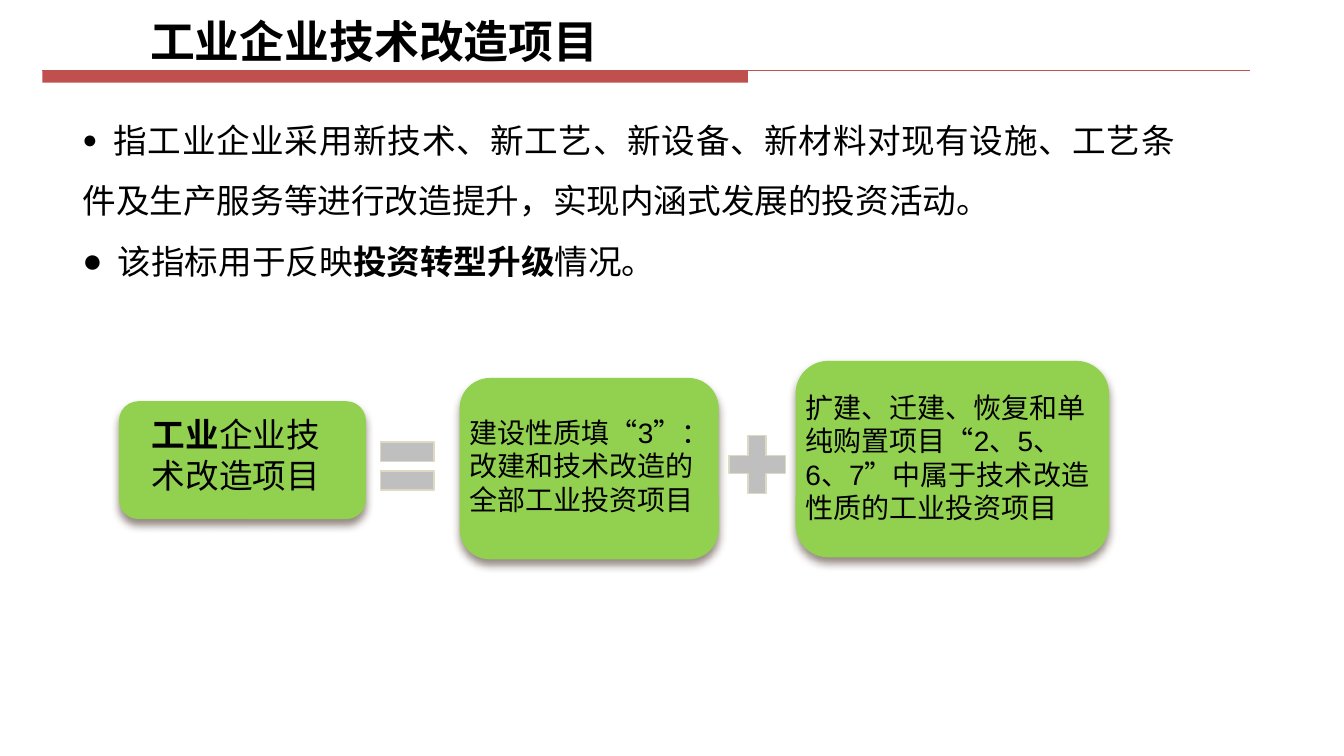
"""Build the slide on industrial technical renovation projects."""
from lxml.etree import SubElement
from pptx import Presentation
from pptx.dml.color import RGBColor
from pptx.enum.shapes import MSO_CONNECTOR, MSO_SHAPE
from pptx.enum.text import MSO_ANCHOR, PP_ALIGN
from pptx.oxml import parse_xml
from pptx.oxml.ns import nsdecls, qn
from pptx.util import Inches, Pt

theme = {
    "ink": RGBColor.from_string("000000"),
    "red": RGBColor.from_string("C0504D"),
    "green": RGBColor.from_string("92D050"),
    "gray": RGBColor.from_string("BFBFBF"),
    "edge": RGBColor.from_string("DDD9C3"),
    "shade": "4E3B30",
    "sans": "Noto Sans CJK SC",
    "latin": "Arial",
    "title": Pt(32),
    "body": Pt(24),
    "note": Pt(20),
}

deck = Presentation()
deck.slide_width, deck.slide_height = Inches(13.33), Inches(7.5)
col, row = deck.slide_width / 100, deck.slide_height / 100
slide = deck.slides.add_slide(deck.slide_layouts[6])
shapes = slide.shapes


def place(x, y, w, h):
    """Turn percent shares of the slide into lengths."""
    return int(x * col), int(y * row), int(w * col), int(h * row)


def write(spot, paras, size, face, form, anchor=MSO_ANCHOR.TOP):
    """Add a text box of (text, bold) runs and return its paragraphs."""
    frame = shapes.add_textbox(*place(*spot)).text_frame
    frame.word_wrap = True
    frame.vertical_anchor = anchor
    for i, runs in enumerate(paras):
        para = frame.paragraphs[0] if i == 0 else frame.add_paragraph()
        for key, value in form.items():
            setattr(para, key, value)
        for text, bold in runs:
            run = para.add_run()
            run.text = text
            look = {"size": size, "name": face, "bold": bold}
            for key, value in look.items():
                setattr(run.font, key, value)
            run.font.color.rgb = theme["ink"]
            SubElement(run.font._element, qn("a:ea")).set("typeface", theme["sans"])
    return frame.paragraphs


band = shapes.add_shape(MSO_SHAPE.RECTANGLE, *place(3.15, 9.33, 52.5, 1.6))
band.shadow.inherit = False
band.fill.solid()
band.fill.fore_color.rgb = theme["red"]
band.line.fill.background()

left, top, right, base = place(3.15, 9.33, 93, 9.33)
rule = shapes.add_connector(MSO_CONNECTOR.STRAIGHT, left, top, right, base)
rule.line.color.rgb = theme["red"]
rule.line.width = Pt(0.75)
SubElement(rule._element.spPr, qn("a:effectLst"))

for spot in [
    (8.85, 53.07, 18.38, 15.6),
    (34.2, 50, 19.28, 24),
    (59.19, 47.73, 23.33, 26),
]:
    card = shapes.add_shape(MSO_SHAPE.ROUNDED_RECTANGLE, *place(*spot))
    card.fill.solid()
    card.fill.fore_color.rgb = theme["green"]
    card.line.fill.background()
    card._element.spPr.append(parse_xml(
        f'<a:effectLst {nsdecls("a")}><a:outerShdw blurRad="{Pt(6)}" dist="{Pt(4)}" '
        f'dir="5400000" rotWithShape="0"><a:srgbClr val="{theme["shade"]}">'
        '<a:alpha val="60000"/></a:srgbClr></a:outerShdw></a:effectLst>'))

for kind, spot in [
    (MSO_SHAPE.MATH_EQUAL, (27.6, 56.27, 5.4, 10.8)),
    (MSO_SHAPE.MATH_PLUS, (53.49, 56.27, 5.7, 10.4)),
]:
    sign = shapes.add_shape(kind, *place(*spot))
    sign.shadow.inherit = False
    sign.fill.solid()
    sign.fill.fore_color.rgb = theme["gray"]
    sign.line.color.rgb = theme["edge"]
    sign.line.width = Pt(1)

write((10.43, 0.93, 48.76, 8.8), [[("工业企业技术改造项目", True)]],
      theme["title"], theme["sans"], {"line_spacing": 0.9}, MSO_ANCHOR.BOTTOM)
write((9.45, 54.13, 16.2, 12.13), [[("工业", True), ("企业技术改造项目", False)]],
      theme["body"], theme["sans"], {"alignment": PP_ALIGN.CENTER})

for spot, text in [
    ((34.2, 54.27, 20.03, 14.8), "建设性质填“3”：改建和技术改造的全部工业投资项目"),
    ((59.19, 50.93, 23.56, 19.73),
     "扩建、迁建、恢复和单纯购置项目“2、5、6、7”中属于技术改造性质的工业投资项目"),
]:
    write(spot, [[(text, False)]], theme["note"], theme["latin"], {})

points = write(
    (5.4, 12.53, 82.82, 25.6),
    [
        [("\t指工业企业采用新技术、新工艺、新设备、新材料对现有设施、工艺条件及生产服务等"
          "进行改造提升，实现内涵式发展的投资活动。", False)],
        [("\t该指标用于反映", False), ("投资转型升级", True), ("情况。", False)],
    ],
    theme["body"], theme["sans"],
    {"alignment": PP_ALIGN.JUSTIFY, "line_spacing": 1.5})
for para, share, stop in zip(points, (75, 100), (0.3, 0.35)):
    props = para._element.get_or_add_pPr()
    props.set("marL", "0")
    props.set("indent", "0")
    SubElement(props, qn("a:buSzPct")).set("val", str(share * 1000))
    SubElement(props, qn("a:buFont")).set("typeface", theme["latin"])
    SubElement(props, qn("a:buChar")).set("char", "●")
    tab = SubElement(SubElement(props, qn("a:tabLst")), qn("a:tab"))
    tab.set("pos", str(Inches(stop)))
    tab.set("algn", "l")

deck.save("out.pptx")
